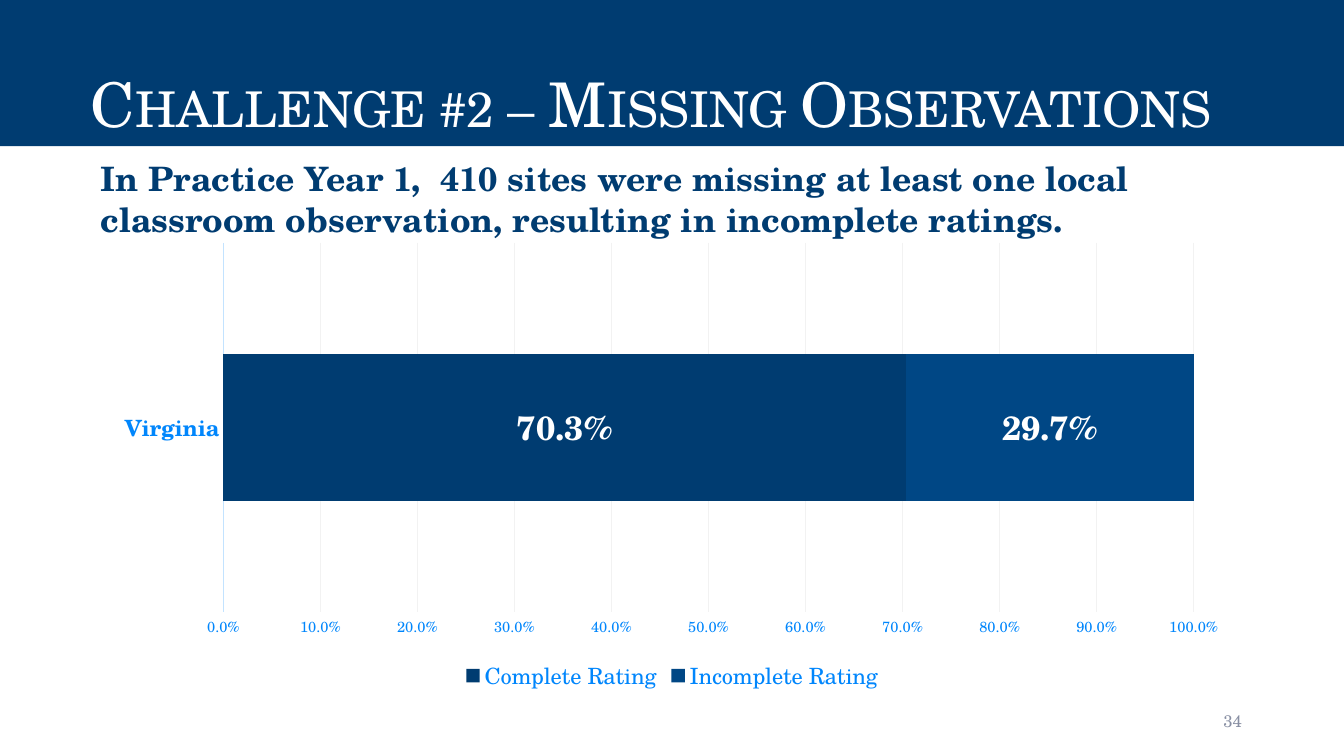
from lxml import etree
from pptx import Presentation
from pptx.chart.data import CategoryChartData
from pptx.dml.color import RGBColor
from pptx.enum.chart import XL_CHART_TYPE, XL_LABEL_POSITION, XL_LEGEND_POSITION, XL_TICK_MARK
from pptx.enum.text import MSO_ANCHOR, MSO_AUTO_SIZE, PP_ALIGN
from pptx.oxml import parse_xml
from pptx.oxml.ns import nsdecls, qn
from pptx.util import Cm, Pt

STACKED_BAR = XL_CHART_TYPE.BAR_STACKED
LABEL_CENTER = XL_LABEL_POSITION.CENTER
LEGEND_BOTTOM = XL_LEGEND_POSITION.BOTTOM
NO_TICK = XL_TICK_MARK.NONE
BOTTOM, MIDDLE, TOP = MSO_ANCHOR.BOTTOM, MSO_ANCHOR.MIDDLE, MSO_ANCHOR.TOP
LEFT, RIGHT = PP_ALIGN.LEFT, PP_ALIGN.RIGHT
NO_AUTOFIT = MSO_AUTO_SIZE.NONE

NAVY = RGBColor(0x00, 0x3C, 0x71)
BLUE = RGBColor(0x00, 0x47, 0x85)
BRIGHT_BLUE = RGBColor(0x00, 0x86, 0xFC)
PALE_BLUE = RGBColor(0xC3, 0xE3, 0xFF)
GRID_GRAY = RGBColor(0xF2, 0xF2, 0xF2)
NUMBER_GRAY = RGBColor(0x88, 0x8F, 0xA3)
WHITE = RGBColor(0xFF, 0xFF, 0xFF)

FONT = "TeX Gyre Schola"
PERCENT = "0.0%"
RATINGS = [("Complete Rating", 0.703, NAVY), ("Incomplete Rating", 0.297, BLUE)]
PLOT_LAYOUT = {"x": 0.106, "y": 0.02, "w": 0.852, "h": 0.797}


def style_font(font, size, color, bold=False):
    font.name = FONT
    font.size = Pt(size)
    font.bold = bold
    font.color.rgb = color


def write_text(shape, box, text, size, color, anchor, align, bold=False):
    shape.left, shape.top, shape.width, shape.height = box
    frame = shape.text_frame
    frame.word_wrap = True
    frame.auto_size = NO_AUTOFIT
    frame.vertical_anchor = anchor
    frame.margin_left = frame.margin_right = Cm(0.25)
    frame.margin_top = frame.margin_bottom = Cm(0.13)
    frame.text = text
    paragraph = frame.paragraphs[0]
    paragraph.alignment = align
    paragraph.space_before = Pt(0)
    style_font(paragraph.font, size, color, bold)
    return paragraph


def add_heading(slide, box):
    heading = slide.shapes.title
    paragraph = write_text(heading, box, "Challenge #2 – Missing Observations",
                           44, WHITE, BOTTOM, LEFT)
    heading.fill.solid()
    heading.fill.fore_color.rgb = NAVY
    heading.text_frame.margin_left = Cm(2.29)
    paragraph.line_spacing = 0.9
    paragraph._p.get_or_add_pPr().get_or_add_defRPr().set("cap", "small")


def add_finding(slide, box):
    paragraph = write_text(
        slide.placeholders[1], box,
        "In Practice Year 1,  410 sites were missing at least one local "
        "classroom observation, resulting in incomplete ratings.",
        24, NAVY, TOP, LEFT, bold=True)
    properties = paragraph._p.get_or_add_pPr()
    properties.set("marL", str(Cm(0.51)))
    properties.set("indent", "0")
    properties.get_or_add_defRPr().addprevious(etree.Element(qn("a:buNone")))


def add_ratings_chart(slide, box):
    ratings = CategoryChartData(number_format=PERCENT)
    ratings.categories = ["Virginia"]
    for name, share, _ in RATINGS:
        ratings.add_series(name, [share])
    chart = slide.shapes.add_chart(STACKED_BAR, *box, ratings).chart
    chart.has_title = False
    style_font(chart.font, 10, NAVY)

    chart.has_legend = True
    chart.legend.position = LEGEND_BOTTOM
    chart.legend.include_in_layout = False
    style_font(chart.legend.font, 16, BRIGHT_BLUE)

    plot = chart.plots[0]
    plot.gap_width = 150
    plot.overlap = 100
    plot.vary_by_categories = False
    for series, (_, _, color) in zip(plot.series, RATINGS):
        series.format.fill.solid()
        series.format.fill.fore_color.rgb = color
        labels = series.data_labels
        labels.show_value = True
        labels.position = LABEL_CENTER
        labels.number_format = PERCENT
        labels.number_format_is_linked = False
        style_font(labels.font, 24, WHITE, bold=True)

    for axis, size, bold in ((chart.category_axis, 16, True), (chart.value_axis, 10.5, False)):
        axis.major_tick_mark = axis.minor_tick_mark = NO_TICK
        style_font(axis.tick_labels.font, size, BRIGHT_BLUE, bold)
    site_line = chart.category_axis.format.line
    site_line.color.rgb = PALE_BLUE
    site_line.width = Pt(0.75)

    shares = chart.value_axis
    shares.minimum_scale, shares.maximum_scale, shares.major_unit = 0, 1, 0.1
    shares.tick_labels.number_format = PERCENT
    shares.tick_labels.number_format_is_linked = False
    shares.format.line.fill.background()
    shares.has_major_gridlines = True
    shares.major_gridlines.format.line.color.rgb = GRID_GRAY
    shares.major_gridlines.format.line.width = Pt(0.75)
    place_plot(chart)


def place_plot(chart):
    plot_area = chart._chartSpace.chart.plotArea
    for layout in plot_area.findall(qn("c:layout")):
        plot_area.remove(layout)
    modes = '<c:layoutTarget val="inner"/><c:xMode val="edge"/><c:yMode val="edge"/>'
    sizes = "".join(f'<c:{side} val="{part}"/>' for side, part in PLOT_LAYOUT.items())
    plot_area.insert(0, parse_xml(
        f'<c:layout {nsdecls("c")}><c:manualLayout>{modes}{sizes}</c:manualLayout></c:layout>'))


def add_page_number(slide, box):
    write_text(slide.shapes.add_textbox(*box), box, "34", 12, NUMBER_GRAY, MIDDLE, RIGHT)


def main():
    presentation = Presentation()
    presentation.slide_width = Cm(33.87)
    presentation.slide_height = Cm(19.05)
    slide = presentation.slides.add_slide(presentation.slide_layouts[1])
    add_heading(slide, (Cm(0), Cm(0), presentation.slide_width, Cm(3.68)))
    add_finding(slide, (Cm(1.78), Cm(3.86), Cm(30.43), Cm(1.85)))
    add_ratings_chart(slide, (Cm(2.59), Cm(5.89), Cm(28.7), Cm(11.66)))
    add_page_number(slide, (Cm(23.93), Cm(17.65), Cm(7.62), Cm(1.02)))
    presentation.save("out.pptx")


if __name__ == "__main__":
    main()
